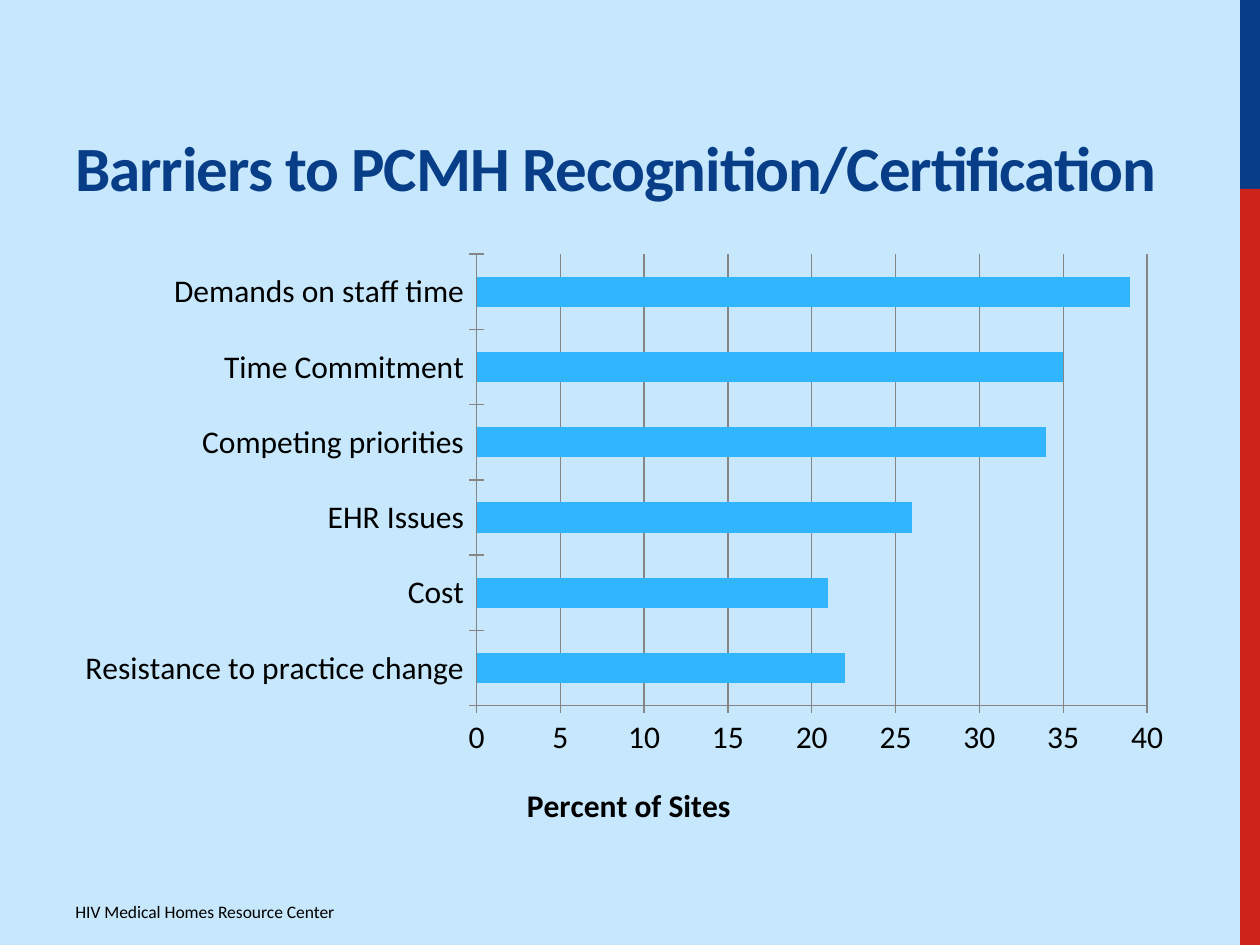
from lxml import etree
from pptx import Presentation
from pptx import util as u
from pptx.chart.data import CategoryChartData
from pptx.dml.color import RGBColor
from pptx.enum import chart as ec, shapes, text
from pptx.oxml.ns import qn


def paint(color_format, value):
    color_format.rgb = RGBColor.from_string(value)


def place(parent, index, **fractions):
    for old in parent.findall(qn("c:layout")):
        parent.remove(old)
    layout = etree.Element(qn("c:layout"))
    manual = etree.SubElement(layout, qn("c:manualLayout"))
    if "w" in fractions:
        etree.SubElement(manual, qn("c:layoutTarget")).set("val", "inner")
    for mode in ("xMode", "yMode"):
        etree.SubElement(manual, qn("c:" + mode)).set("val", "edge")
    for name, value in fractions.items():
        etree.SubElement(manual, qn("c:" + name)).set("val", str(value))
    parent.insert(index, layout)


prs = Presentation()
prs.slide_width, prs.slide_height = u.Cm(25.4), u.Cm(19.05)
s = prs.slides.add_slide(prs.slide_layouts[6])

panels = [
    (0, 0, 25, 19.05, "C6E7FC"),
    (25, 0, 0.4, 3.81, "073E87"),
    (25, 3.81, 0.4, 15.24, "CC241B"),
]
for x, y, w, h, color in panels:
    sp = s.shapes.add_shape(shapes.MSO_SHAPE.RECTANGLE, u.Cm(x), u.Cm(y), u.Cm(w), u.Cm(h))
    sp.shadow.inherit = False
    sp.fill.solid()
    paint(sp.fill.fore_color, color)
    sp.line.fill.background()

labels = [
    ("HIV Medical Homes Resource Center", 18.03, 9.53, 0.79, 10, False, "000000", text.MSO_ANCHOR.TOP),
    ("Barriers to PCMH Recognition/Certification", 0.43, 22.53, 3.81, 36, True, "073E87", text.MSO_ANCHOR.BOTTOM),
]
for words, y, w, h, size, bold, color, anchor in labels:
    sp = s.shapes.add_textbox(u.Cm(1.27), u.Cm(y), u.Cm(w), u.Cm(h))
    tf = sp.text_frame
    tf.word_wrap = True
    tf.vertical_anchor = anchor
    p = tf.paragraphs[0]
    r = p.add_run()
    r.text = words
    p.font.name, p.font.size, p.font.bold = "Calibri", u.Pt(size), bold
    paint(p.font.color, color)
    if bold:
        r.font._element.set("spc", "-60")

data = CategoryChartData()
data.categories = [
    "Resistance to practice change", "Cost", "EHR Issues",
    "Competing priorities", "Time Commitment", "Demands on staff time",
]
data.add_series("Series 1", (22, 21, 26, 34, 35, 39))
chart = s.shapes.add_chart(
    ec.XL_CHART_TYPE.BAR_CLUSTERED, u.Cm(1.27), u.Cm(4.88), u.Cm(22.53), u.Cm(12.14), data
).chart
chart.has_legend = False
chart.has_title = False
chart.font.name, chart.font.size = "Calibri", u.Pt(18)
paint(chart.font.color, "000000")

plot = chart.plots[0]
plot.gap_width = 150
plot.vary_by_categories = False
fill = plot.series[0].format.fill
fill.solid()
paint(fill.fore_color, "31B6FD")

axis = chart.value_axis
axis.minimum_scale, axis.maximum_scale, axis.major_unit = 0, 40, 5
axis.has_major_gridlines = True
for line in (axis.format.line, axis.major_gridlines.format.line, chart.category_axis.format.line):
    paint(line.color, "868686")
    line.width = u.Pt(0.75)
for ax in (axis, chart.category_axis):
    ax.major_tick_mark = ec.XL_TICK_MARK.CROSS

p = axis.axis_title.text_frame.paragraphs[0]
r = p.add_run()
r.text = "Percent of Sites"
p.font.name, p.font.size, p.font.bold = "Calibri", u.Pt(18), True
paint(p.font.color, "000000")

place(chart._chartSpace.chart.plotArea, 0, x=0.37, y=0.02, w=0.6, h=0.75)
place(axis.axis_title._element, 1, x=0.41, y=0.89)

prs.save("out.pptx")
